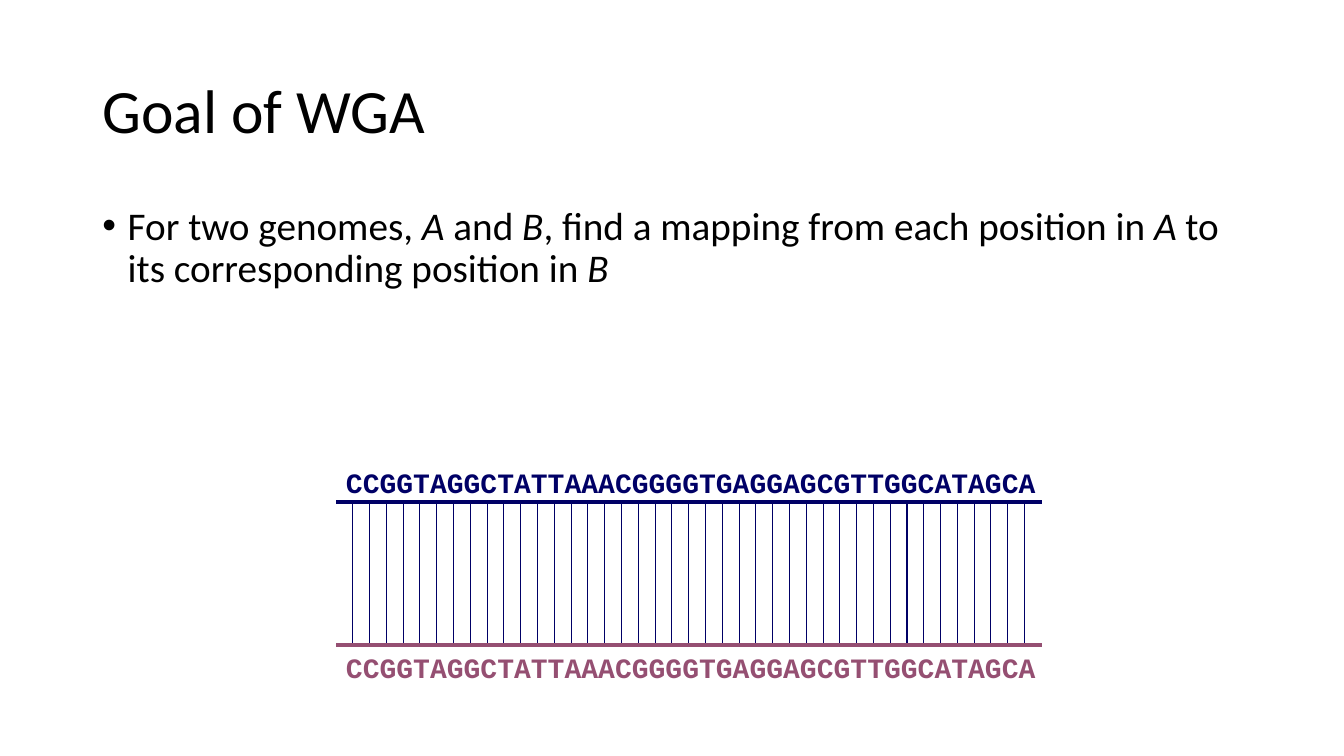
import pptx
import pptx.dml.color
import pptx.enum.shapes
import pptx.enum.text
import pptx.oxml.ns
import pptx.util
from lxml import etree

Cm, Pt = pptx.util.Cm, pptx.util.Pt
RGBColor = pptx.dml.color.RGBColor
BLACK = RGBColor(0x00, 0x00, 0x00)
NAVY = RGBColor(0x00, 0x00, 0x66)
PLUM = RGBColor(0x95, 0x4F, 0x72)

SEQUENCE = "CCGGTAGGCTATTAAACGGGGTGAGGAGCGTTGGCATAGCA"
GOAL = [("For two genomes, ", False), ("A", True), (" and ", False), ("B", True),
        (", find a mapping from each position in ", False), ("A", True),
        (" to its corresponding position in ", False), ("B", True)]

# Alignment geometry in centimetres
STRAND_LEFT, STRAND_RIGHT = 8.47, 26.25
STRAND_A_Y, STRAND_B_Y = 12.65, 16.26
FIRST_BASE_X, LAST_BASE_X = 8.89, 25.82
LABEL_WIDTH, LABEL_HEIGHT = 17.98, 1.09


def format_font(font, name, size, color, bold=False, italic=False):
    font.name = name
    font.size = Pt(size)
    font.bold = bold
    font.italic = italic
    font.color.rgb = color


def add_title(slide, text):
    title = slide.shapes.title
    title.left, title.top, title.width, title.height = Cm(2.33), Cm(1.01), Cm(29.21), Cm(3.68)
    frame = title.text_frame
    frame.text = text
    frame.vertical_anchor = pptx.enum.text.MSO_ANCHOR.MIDDLE
    paragraph = frame.paragraphs[0]
    paragraph.alignment = pptx.enum.text.PP_ALIGN.LEFT
    paragraph.line_spacing = 0.9
    format_font(paragraph.runs[0].font, "Calibri", 44, BLACK)


def add_bullet_statement(slide, pieces):
    statement = slide.shapes.add_textbox(Cm(2.33), Cm(5.07), Cm(29.21), Cm(12.09))
    statement.text_frame.word_wrap = True
    paragraph = statement.text_frame.paragraphs[0]
    paragraph.line_spacing = 0.9
    properties = paragraph._p.get_or_add_pPr()
    properties.set("marL", str(Cm(0.64)))
    properties.set("indent", str(Cm(-0.64)))
    bullet_font = etree.SubElement(properties, pptx.oxml.ns.qn("a:buFont"))
    bullet_font.set("typeface", "Arial")
    bullet = etree.SubElement(properties, pptx.oxml.ns.qn("a:buChar"))
    bullet.set("char", "•")
    for text, italic in pieces:
        run = paragraph.add_run()
        run.text = text
        format_font(run.font, "Calibri", 28, BLACK, italic=italic)


def add_line(group, x1, y1, x2, y2, color, weight):
    line = group.shapes.add_connector(pptx.enum.shapes.MSO_CONNECTOR.STRAIGHT,
                                      Cm(x1), Cm(y1), Cm(x2), Cm(y2))
    line.line.color.rgb = color
    line.line.width = Pt(weight)
    etree.SubElement(line._element.spPr, pptx.oxml.ns.qn("a:effectLst"))


def add_base_pairs(slide):
    pairs = slide.shapes.add_group_shape()
    pitch = (LAST_BASE_X - FIRST_BASE_X) / (len(SEQUENCE) - 1)
    for index in range(len(SEQUENCE)):
        x = FIRST_BASE_X + index * pitch
        add_line(pairs, x, STRAND_A_Y, x, STRAND_B_Y, NAVY, 0.75)


def add_strand(slide, y, label_top, color):
    strand = slide.shapes.add_group_shape()
    add_line(strand, STRAND_LEFT, y, STRAND_RIGHT, y, color, 3)
    label = strand.shapes.add_textbox(Cm(STRAND_LEFT), Cm(label_top),
                                      Cm(LABEL_WIDTH), Cm(LABEL_HEIGHT))
    frame = label.text_frame
    frame.word_wrap = True
    frame.auto_size = pptx.enum.text.MSO_AUTO_SIZE.SHAPE_TO_FIT_TEXT
    frame.text = SEQUENCE
    format_font(frame.paragraphs[0].runs[0].font, "Courier New", 20, color, bold=True)


def main():
    presentation = pptx.Presentation()
    presentation.slide_width, presentation.slide_height = Cm(33.87), Cm(19.05)
    slide = presentation.slides.add_slide(presentation.slide_layouts[5])

    # Heading and statement
    add_title(slide, "Goal of WGA")
    add_bullet_statement(slide, GOAL)

    # Two aligned genomes with one link per base
    add_base_pairs(slide)
    add_strand(slide, STRAND_A_Y, 11.61, NAVY)
    add_strand(slide, STRAND_B_Y, STRAND_B_Y, PLUM)

    presentation.save("out.pptx")


if __name__ == "__main__":
    main()
